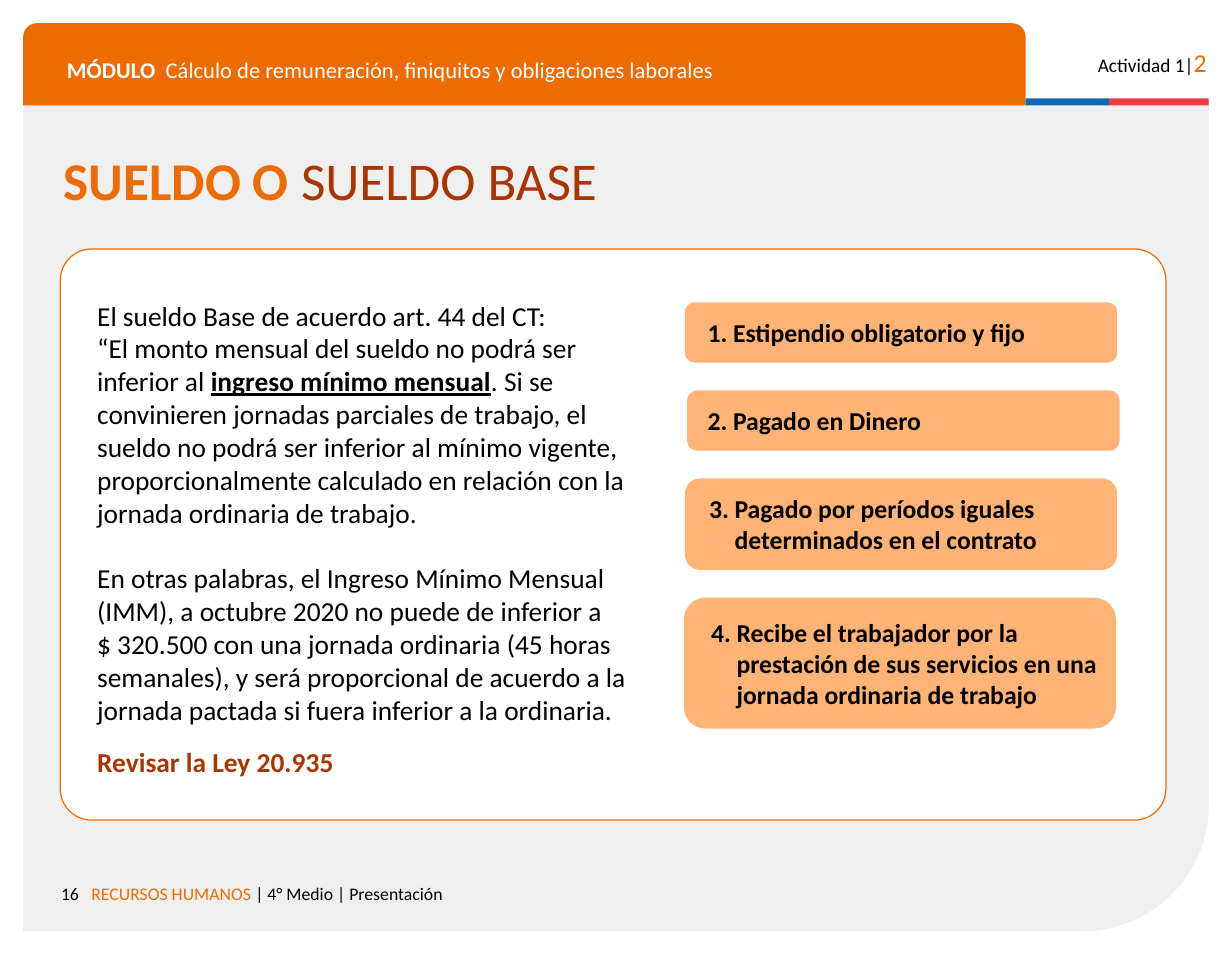
from pptx import Presentation
from pptx.dml.color import RGBColor
from pptx.enum.shapes import MSO_SHAPE as Kind
from pptx.enum.text import MSO_ANCHOR as Anchor, PP_ALIGN as Align
from pptx.oxml.ns import qn
from pptx.util import Inches, Pt
from lxml.etree import SubElement

ORANGE, RUST, PEACH = "ED6B00", "A93501", "FFB375"
BLACK, WHITE, GRAY = "000000", "FFFFFF", "EFEFEF"

FRAME = [
    (Kind.ROUND_1_RECTANGLE, (0.2, 0.9, 10.23, 7.14), GRAY, [0.153]),
    (Kind.ROUND_2_SAME_RECTANGLE, (0.2, 0.2, 8.65, 0.71), ORANGE, [0.167, 0]),
    (Kind.RECTANGLE, (8.85, 0.85, 0.72, 0.06), "0F69B4", []),
    (Kind.RECTANGLE, (9.57, 0.85, 0.86, 0.06), "EB3C46", []),
    (Kind.ROUNDED_RECTANGLE, (0.52, 2.15, 9.54, 4.93), WHITE, [0.055]),
]

LABELS = [
    ((0.2, 7.53, 0.58, 0.29), 0.1, Align.RIGHT, [("16", 11, BLACK, "")]),
    ((0.69, 7.53, 7.14, 0.38), 0.1, Align.LEFT,
     [("RECURSOS HUMANOS ", 11, ORANGE, ""), ("| 4° Medio | Presentación", 11, BLACK, "")]),
    ((9.23, 0.3, 1.28, 0.38), 0.1, Align.RIGHT,
     [("Actividad 1|", 12, BLACK, ""), ("2", 16, ORANGE, "")]),
    ((0.48, 0.38, 8.14, 0.35), 0.1, Align.LEFT,
     [("MÓDULO  ", 14, WHITE, "b"),
      ("Cálculo de remuneración, finiquitos y obligaciones laborales", 14, WHITE, "")]),
    ((0.45, 1.22, 9.89, 0.66), 0.05, Align.LEFT,
     [("SUELDO O ", 33, ORANGE, "b"), ("SUELDO BASE", 33, RUST, "")]),
]

BODY = [
    (0, [("El sueldo Base de acuerdo art. 44 del CT:", 17, BLACK, "")]),
    (0, [("“El monto mensual del sueldo no podrá ser inferior al ", 17, BLACK, ""),
         ("ingreso mínimo mensual", 17, BLACK, "bu"),
         (". Si se convinieren jornadas parciales de trabajo, el sueldo no podrá ser "
          "inferior al mínimo vigente, proporcionalmente calculado en relación con la "
          "jornada ordinaria de trabajo.", 17, BLACK, "")]),
    (20.5, [("En otras palabras, el Ingreso Mínimo Mensual (IMM), a octubre 2020 no puede "
             "de inferior a \n$ 320.500 con una jornada ordinaria (45 horas semanales), y será "
             "proporcional de acuerdo a la jornada pactada si fuera inferior a la ordinaria.",
             17, BLACK, "")]),
    (12, [("Revisar la Ley 20.935", 17, RUST, "b")]),
]

CARDS = [
    (5.91, 0.52, "Estipendio obligatorio y fijo"),
    (5.93, 0.52, "Pagado en Dinero"),
    (5.91, 0.79, "Pagado por períodos iguales determinados en el contrato"),
    (5.9, 1.13, "Recibe el trabajador por la prestación de sus servicios en una "
                "jornada ordinaria de trabajo"),
]
CARD_TOP, CARD_WIDTH, CARD_GAP, TEXT_LEFT = 2.61, 3.73, 0.24, 6.08


def color(code):
    return RGBColor.from_string(code)


def add_block(slide, kind, box, fill, adjust):
    shape = slide.shapes.add_shape(kind, *map(Inches, box))
    shape.shadow.inherit = False
    shape.fill.solid()
    shape.fill.fore_color.rgb = color(fill)
    shape.line.fill.background()
    for i, value in enumerate(adjust):
        shape.adjustments[i] = value
    return shape


def set_frame(frame, left, pad):
    frame.word_wrap = True
    frame.margin_left, frame.margin_right = Inches(left), Inches(0.1)
    frame.margin_top = frame.margin_bottom = Inches(pad)


def add_runs(para, runs):
    for text, size, code, style in runs:
        for i, line in enumerate(text.split("\n")):
            if i:
                para.add_line_break()
            run = para.add_run()
            run.text = line
            font = run.font
            font.name, font.size = "Calibri", Pt(size)
            font.bold, font.underline = "b" in style, "u" in style
            font.color.rgb = color(code)


def add_text(slide, box, pad, paras, align=Align.LEFT):
    frame = slide.shapes.add_textbox(*map(Inches, box)).text_frame
    set_frame(frame, 0.1, pad)
    for i, (space, runs) in enumerate(paras):
        para = frame.add_paragraph() if i else frame.paragraphs[0]
        para.alignment, para.space_before = align, Pt(space)
        add_runs(para, runs)


def add_card(slide, number, box, text):
    card = add_block(slide, Kind.ROUNDED_RECTANGLE, box, PEACH, [0.167])
    frame = card.text_frame
    set_frame(frame, TEXT_LEFT - box[0], 0.05)
    frame.vertical_anchor = Anchor.MIDDLE
    para = frame.paragraphs[0]
    para.alignment = Align.LEFT
    props = para._p.get_or_add_pPr()
    props.set("marL", str(Inches(0.22)))
    props.set("indent", str(Inches(-0.22)))
    SubElement(props, qn("a:buAutoNum"), type="arabicPeriod", startAt=str(number))
    add_runs(para, [(text, 16, BLACK, "b")])


def main():
    """Build the base salary slide."""
    deck = Presentation()
    deck.slide_width, deck.slide_height = Inches(10.63), Inches(8.27)
    slide = deck.slides.add_slide(deck.slide_layouts[6])

    page, *_, panel = [add_block(slide, *part) for part in FRAME]
    page._element.spPr.xfrm.set("flipV", "1")
    panel.line.color.rgb = color(ORANGE)
    panel.line.width = Pt(0.75)

    for box, pad, align, runs in LABELS:
        add_text(slide, box, pad, [(0, runs)], align)
    add_text(slide, (0.74, 2.53, 4.97, 4.39), 0.05, BODY)

    top = CARD_TOP
    for number, (left, height, text) in enumerate(CARDS, 1):
        add_card(slide, number, (left, top, CARD_WIDTH, height), text)
        top += height + CARD_GAP

    deck.save("out.pptx")


if __name__ == "__main__":
    main()
